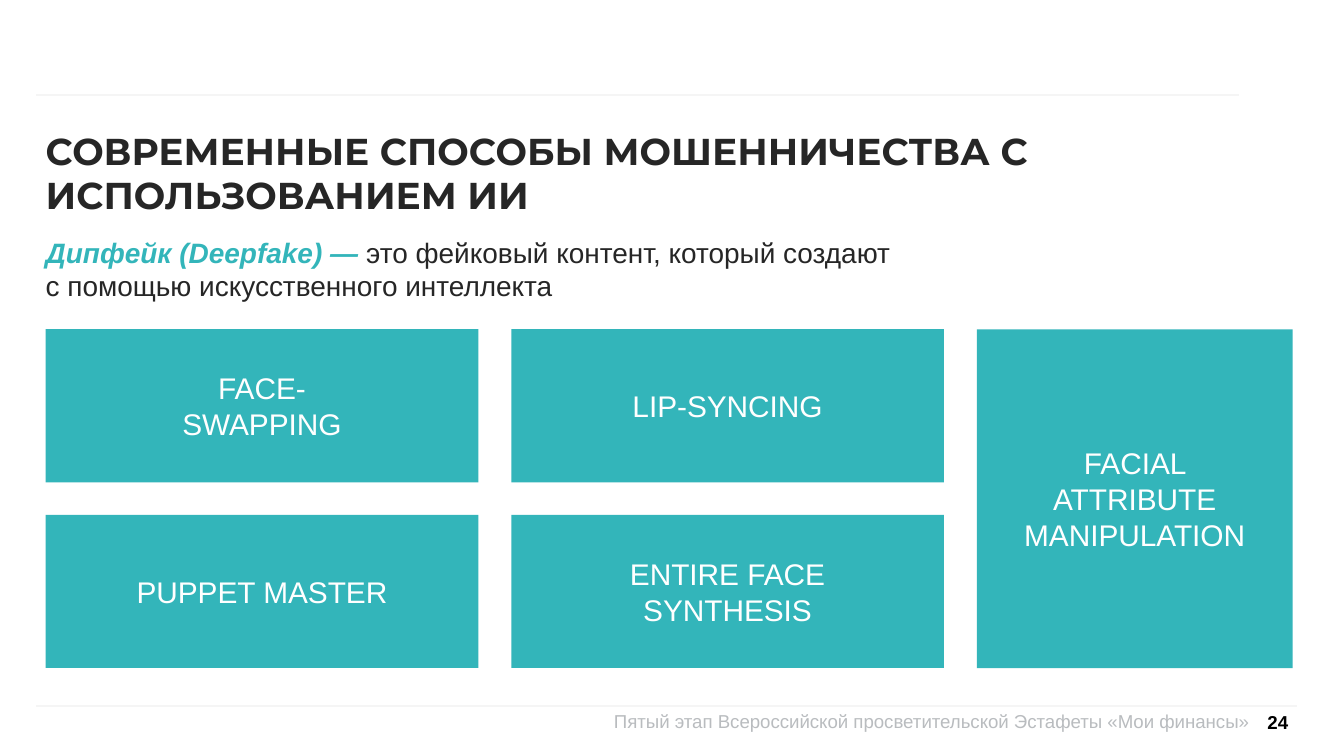
"""Build the slide on AI-based fraud: a deepfake definition and five technique cards."""
from lxml import etree
from pptx import Presentation
from pptx.dml.color import RGBColor
from pptx.enum import shapes, text
from pptx.oxml.ns import qn
from pptx.util import Pt

THEME = {
    "teal": "33B5BA", "ink": "262626", "rule": "F5F5F5", "footer": "B9BCBF",
    "white": "FFFFFF", "black": "000000",
    "heading_font": "Montserrat", "body_font": "Arial",
    "title": 20, "lead": 15, "card": 16, "small": 10,
}
TITLE = "СОВРЕМЕННЫЕ СПОСОБЫ МОШЕННИЧЕСТВА С ИСПОЛЬЗОВАНИЕМ ИИ"
TERM = "Дипфейк (Deepfake) — "
MEANING = "это фейковый контент, который создают с помощью искусственного интеллекта"
FOOTER = "Пятый этап Всероссийской просветительской Эстафеты «Мои финансы»"
PAGE = "24"
TECHNIQUES = [
    {"label": "FACE-SWAPPING", "column": 0, "row": 0, "inset": 56},
    {"label": "LIP-SYNCING", "column": 1, "row": 0, "inset": 56},
    {"label": "PUPPET MASTER", "column": 0, "row": 1, "inset": 41},
    {"label": "ENTIRE FACE SYNTHESIS", "column": 1, "row": 1, "inset": 56},
    {"label": "FACIAL ATTRIBUTE MANIPULATION", "column": 2, "row": 0, "inset": 20, "rows": 2},
]
RULES = [(51.1, 663.8), (378, 694.8)]

LEFT, RULE_LEFT = 24.5, 19.5
COLUMN_WIDTHS, COLUMN_GAP = [231.8, 231.8, 169.2], 17.6
GRID_TOP, ROW_HEIGHT, ROW_GAP = 176.4, 82.1, 17.3


def color(name):
    return RGBColor.from_string(THEME[name])


def write(frame, content, size, ink, font="body_font", bold=False, italic=False,
          align=text.PP_ALIGN.LEFT, anchor=text.MSO_ANCHOR.TOP, inset=0, wrap=True):
    frame.word_wrap = wrap
    frame.auto_size = text.MSO_AUTO_SIZE.NONE
    frame.vertical_anchor = anchor
    frame.margin_left = frame.margin_right = Pt(inset)
    frame.margin_top = frame.margin_bottom = Pt(0)
    paragraph = frame.paragraphs[0]
    paragraph.alignment = align
    run = paragraph.add_run()
    run.text = content
    run.font.name = THEME[font]
    run.font.size = Pt(THEME[size])
    run.font.bold, run.font.italic = bold, italic
    run.font.color.rgb = color(ink)


def text_box(slide, left, top, width, height):
    return slide.shapes.add_textbox(Pt(left), Pt(top), Pt(width), Pt(height)).text_frame


def add_rule(slide, top, right):
    rule = slide.shapes.add_connector(
        shapes.MSO_CONNECTOR.STRAIGHT, Pt(RULE_LEFT), Pt(top), Pt(right), Pt(top))
    rule.line.color.rgb = color("rule")
    rule.line.width = Pt(1)
    etree.SubElement(rule._element.spPr, qn("a:effectLst"))


def add_card(slide, label, column, row, inset, rows=1):
    left = LEFT + sum(COLUMN_WIDTHS[:column]) + column * COLUMN_GAP
    top = GRID_TOP + row * (ROW_HEIGHT + ROW_GAP)
    height = rows * ROW_HEIGHT + (rows - 1) * ROW_GAP
    card = slide.shapes.add_shape(
        shapes.MSO_SHAPE.RECTANGLE, Pt(left), Pt(top), Pt(COLUMN_WIDTHS[column]), Pt(height))
    card.shadow.inherit = False
    card.fill.solid()
    card.fill.fore_color.rgb = color("teal")
    card.line.fill.background()
    write(card.text_frame, label, "card", "white", align=text.PP_ALIGN.CENTER,
          anchor=text.MSO_ANCHOR.MIDDLE, inset=inset)


def main():
    deck = Presentation()
    deck.slide_width, deck.slide_height = Pt(720), Pt(405)
    slide = deck.slides.add_slide(deck.slide_layouts[5])

    for top, right in RULES:
        add_rule(slide, top, right)

    title = slide.shapes.title
    title.left, title.top, title.width, title.height = Pt(LEFT), Pt(68.4), Pt(528.5), Pt(41.8)
    write(title.text_frame, TITLE, "title", "ink", font="heading_font", bold=True)

    definition = text_box(slide, LEFT, 126, 460, 41.8)
    write(definition, TERM, "lead", "teal", bold=True, italic=True)
    write(definition, MEANING, "lead", "ink")

    for technique in TECHNIQUES:
        add_card(slide, **technique)

    write(text_box(slide, 257.8, 380.2, 411.1, 25.2), FOOTER, "small", "footer",
          align=text.PP_ALIGN.RIGHT)
    write(text_box(slide, 680.4, 376.6, 13.7, 20.2), PAGE, "small", "black", bold=True,
          align=text.PP_ALIGN.RIGHT, anchor=text.MSO_ANCHOR.MIDDLE, inset=4, wrap=False)

    deck.save("out.pptx")


if __name__ == "__main__":
    main()
